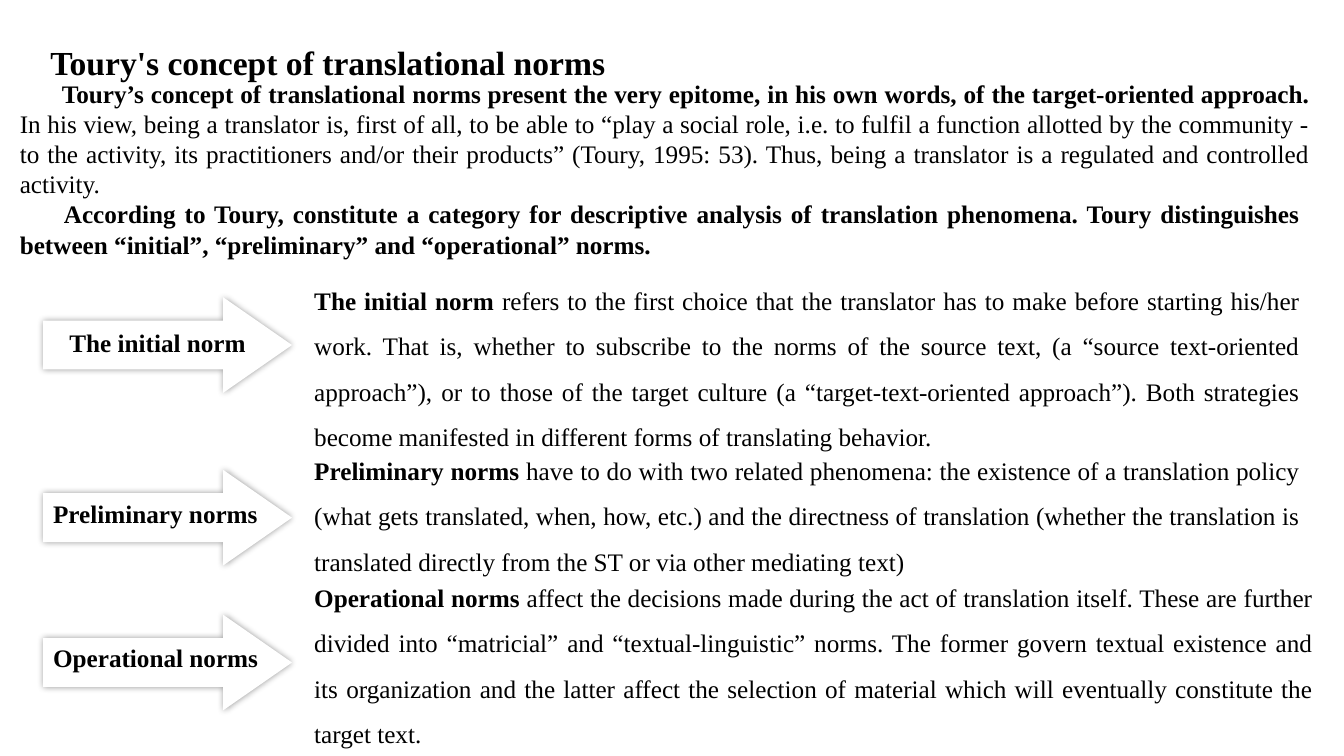
from dataclasses import dataclass

from lxml.etree import SubElement
from pptx import Presentation
from pptx.dml.color import RGBColor
from pptx.enum.shapes import MSO_SHAPE as Preset
from pptx.enum.text import PP_ALIGN as Align
from pptx.oxml.ns import qn
from pptx.slide import Slide
from pptx.util import Cm, Pt

BLACK = RGBColor(0, 0, 0)
WHITE = RGBColor(255, 255, 255)
FONT = "Times New Roman"
ARROW_LEFT, ARROW_WIDTH, ARROW_HEIGHT = 1.09, 6.27, 2.41
DEFINITION_LEFT = 7.67

SINGLE = {"alignment": Align.JUSTIFY}
SPACED = {"alignment": Align.JUSTIFY, "line_spacing": 1.5, "space_after": Pt(4)}
LABEL = {"alignment": Align.LEFT}


@dataclass
class TextBlock:
    left: float
    top: float
    width: float
    height: float
    bold: str
    plain: str
    layout: dict
    size: int = 18
    indent: float = 0


@dataclass
class Norm:
    name: str
    definition: str
    arrow_top: float
    label_left: float
    label_top: float
    text_top: float
    text_width: float
    text_height: float


INTRODUCTION = [
    TextBlock(1.02, 0.43, 16.8, 1.6, "Toury's concept of translational norms", "",
              SPACED, size=24),
    TextBlock(
        0.25, 1.84, 33.02, 3.34,
        "Toury’s concept of translational norms present the very epitome, in his own "
        "words, of the target-oriented approach. ",
        "In his view, being a translator is, first of all, to be able to “play a social "
        "role, i.e. to fulfil a function allotted by the community - to the activity, its "
        "practitioners and/or their products” (Toury, 1995: 53). Thus, being a translator "
        "is a regulated and controlled activity.",
        SINGLE, indent=1.06),
    TextBlock(
        0.25, 4.88, 32.77, 2.57,
        "According to Toury, constitute a category for descriptive analysis of translation "
        "phenomena. Toury distinguishes between “initial”, “preliminary” and “operational” "
        "norms.",
        "", SINGLE, indent=1.11),
]

NORMS = [
    Norm("The initial norm",
         " refers to the first choice that the translator has to make before starting "
         "his/her work. That is, whether to subscribe to the norms of the source text, (a "
         "“source text-oriented approach”), or to those of the target culture (a "
         "“target-text-oriented approach”). Both strategies become manifested in different "
         "forms of translating behavior.",
         7.49, 1.5, 8.13, 6.68, 25.35, 4.72),
    Norm("Preliminary norms",
         " have to do with two related phenomena: the existence of a translation policy "
         "(what gets translated, when, how, etc.) and the directness of translation "
         "(whether the translation is translated directly from the ST or via other "
         "mediating text)",
         11.84, 1.09, 12.42, 10.97, 25.35, 3.58),
    Norm("Operational norms",
         " affect the decisions made during the act of translation itself. These are "
         "further divided into “matricial” and “textual-linguistic” norms. The former "
         "govern textual existence and its organization and the latter affect the "
         "selection of material which will eventually constitute the target text.",
         15.49, 1.09, 16.05, 14.17, 25.68, 4.72),
]


def add_text(page: Slide, block: TextBlock) -> None:
    box = page.shapes.add_textbox(
        Cm(block.left), Cm(block.top), Cm(block.width), Cm(block.height))
    box.text_frame.word_wrap = True
    para = box.text_frame.paragraphs[0]
    for name, value in block.layout.items():
        setattr(para, name, value)
    if block.indent:
        para._p.get_or_add_pPr().set("indent", str(Cm(block.indent)))
    for text, bold in ((block.bold, True), (block.plain, False)):
        if not text:
            continue
        span = para.add_run()
        span.text = text
        span.font.color.rgb = BLACK
        font_format = {"name": FONT, "size": Pt(block.size), "bold": bold}
        for name, value in font_format.items():
            setattr(span.font, name, value)


def add_arrow(page: Slide, top: float) -> None:
    arrow = page.shapes.add_shape(
        Preset.RIGHT_ARROW, Cm(ARROW_LEFT), Cm(top), Cm(ARROW_WIDTH), Cm(ARROW_HEIGHT))
    arrow.adjustments[0] = 0.51
    arrow.adjustments[1] = 0.72
    arrow.fill.solid()
    arrow.fill.fore_color.rgb = WHITE
    arrow.line.fill.background()
    arrow.shadow.inherit = False
    effects = arrow._element.spPr.find(qn("a:effectLst"))
    shadow = SubElement(effects, qn("a:outerShdw"), blurRad=str(Pt(5)), dist="0",
                        algn="ctr", rotWithShape="0")
    color = SubElement(shadow, qn("a:srgbClr"), val=str(BLACK))
    SubElement(color, qn("a:alpha"), val="40000")


def add_norm(page: Slide, norm: Norm) -> None:
    add_arrow(page, norm.arrow_top)
    add_text(page, TextBlock(DEFINITION_LEFT, norm.text_top, norm.text_width,
                             norm.text_height, norm.name, norm.definition, SPACED))
    add_text(page, TextBlock(norm.label_left, norm.label_top, ARROW_WIDTH, 1.02,
                             norm.name, "", LABEL))


def main() -> None:
    deck = Presentation()
    deck.slide_width, deck.slide_height = Cm(33.87), Cm(19.05)
    page = deck.slides.add_slide(deck.slide_layouts[6])
    for block in INTRODUCTION:
        add_text(page, block)
    for norm in NORMS:
        add_norm(page, norm)
    deck.save("out.pptx")


if __name__ == "__main__":
    main()
